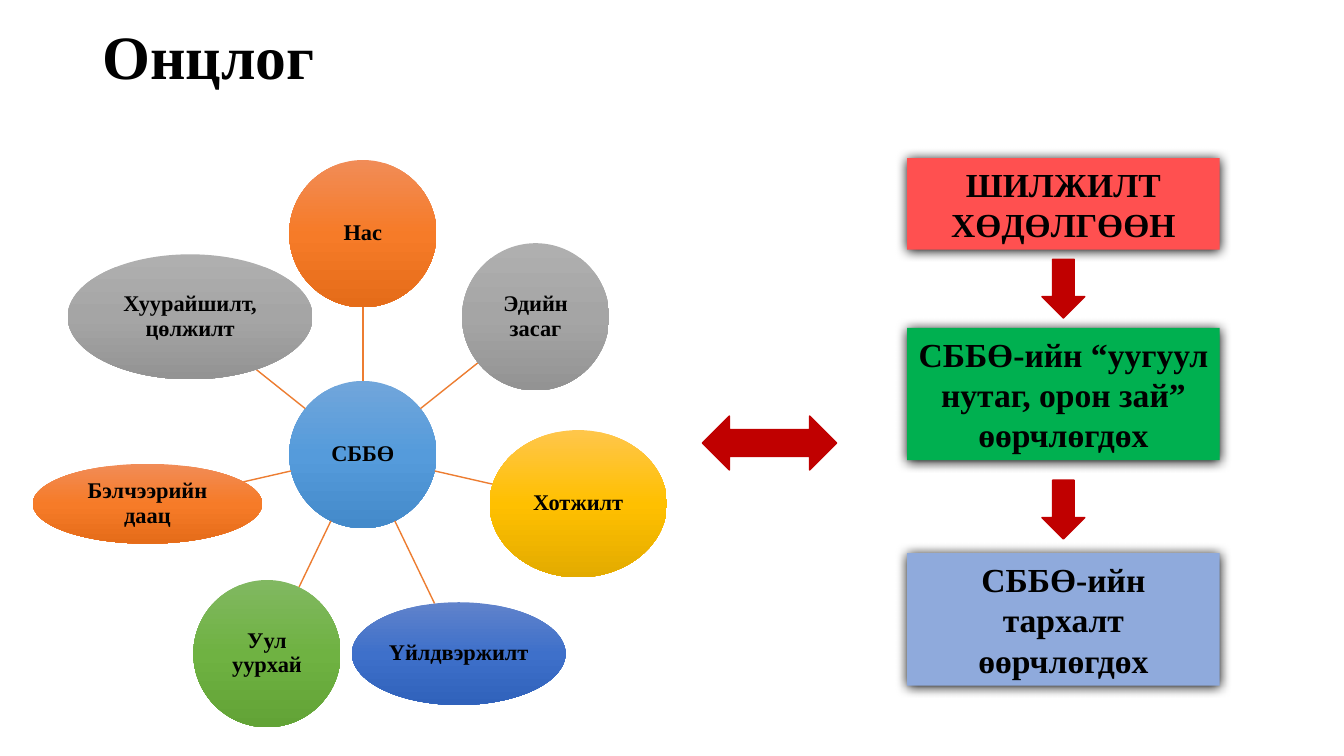
"""Build the slide of factors around СББӨ and the resulting chain of changes."""
import copy
import math
import dataclasses
import lxml.etree
import pptx
import pptx.util
import pptx.dml.color
import pptx.enum.shapes
import pptx.enum.text
import pptx.oxml.ns

Pt = pptx.util.Pt
SHAPES = pptx.enum.shapes.MSO_SHAPE
ALIGN = pptx.enum.text.PP_ALIGN
ANCHOR = pptx.enum.text.MSO_ANCHOR
qn = pptx.oxml.ns.qn


@dataclasses.dataclass(frozen=True)
class Theme:
    font: str = "Times New Roman"
    title_size: int = 44
    box_size: int = 24
    bubble_size: int = 16
    text: str = "000000"
    spoke: str = "ED7D31"
    arrow: str = "C00000"
    red: str = "FF5050"
    green_box: str = "00B050"
    blue_box: str = "8FAADC"
    sky: tuple = ("71A6DB", "559BDB", "448ACA")
    orange: tuple = ("F18C57", "F67B28", "E56C19")
    gray: tuple = ("AFAFAF", "A5A5A5", "939393")
    gold: tuple = ("FFC64B", "FFC000", "E3AB00")
    blue: tuple = ("6183CB", "3E70CA", "3062BB")
    green: tuple = ("81B861", "6FB242", "62A336")


def rgb(code):
    return pptx.dml.color.RGBColor.from_string(code)


def write(frame, text, *, theme, size, align=ALIGN.CENTER, spacing=1.0, inset=None):
    frame.word_wrap = True
    frame.auto_size = pptx.enum.text.MSO_AUTO_SIZE.NONE
    frame.vertical_anchor = ANCHOR.MIDDLE
    if inset is not None:
        frame.margin_left = frame.margin_right = Pt(inset)
        frame.margin_top = frame.margin_bottom = Pt(inset)
    para = frame.paragraphs[0]
    para.alignment = align
    para.line_spacing = spacing
    span = para.add_run()
    span.text = text
    span.font.name = theme.font
    span.font.size = Pt(size)
    span.font.bold = True
    span.font.color.rgb = rgb(theme.text)


class Page:
    def __init__(self, deck, theme):
        self.theme = theme
        self.slide = deck.slides.add_slide(deck.slide_layouts[5])

    def title(self, text, left, top, width, height):
        holder = self.slide.shapes.title
        holder.left, holder.top = Pt(left), Pt(top)
        holder.width, holder.height = Pt(width), Pt(height)
        write(holder.text_frame, text, theme=self.theme, size=self.theme.title_size,
              align=ALIGN.LEFT, spacing=0.9)

    def shape(self, kind, left, top, width, height):
        shape = self.slide.shapes.add_shape(kind, Pt(left), Pt(top), Pt(width), Pt(height))
        shape.shadow.inherit = False
        shape.line.fill.background()
        return shape

    def bubble(self, text, center, size, colors):
        (x, y), (width, height) = center, size
        bubble = self.shape(SHAPES.OVAL, x - width / 2, y - height / 2, width, height)
        bubble.fill.gradient()
        bubble.fill.gradient_angle = 270
        stops = bubble.element.spPr.find(qn("a:gradFill")).find(qn("a:gsLst"))
        stops.insert(1, copy.deepcopy(stops[0]))
        for stop, position, color in zip(bubble.fill.gradient_stops, (0, 0.5, 1), colors):
            stop.position = position
            stop.color.rgb = rgb(color)
        write(bubble.text_frame, text, theme=self.theme, size=self.theme.bubble_size,
              spacing=0.9, inset=0.7)

    def spoke(self, start, end):
        spoke = self.slide.shapes.add_connector(
            pptx.enum.shapes.MSO_CONNECTOR.STRAIGHT, *(Pt(value) for value in (*start, *end)))
        spoke.line.color.rgb = rgb(self.theme.spoke)
        spoke.line.width = Pt(1)
        lxml.etree.SubElement(spoke.element.spPr, qn("a:effectLst"))

    def box(self, text, left, top, width, height, color):
        box = self.shape(SHAPES.RECTANGLE, left, top, width, height)
        box.fill.solid()
        box.fill.fore_color.rgb = rgb(color)
        effects = box.element.spPr.find(qn("a:effectLst"))
        shadow = lxml.etree.SubElement(
            effects, qn("a:outerShdw"), blurRad=str(Pt(8.5)), dist=str(Pt(1)),
            dir="5400000", algn="t", rotWithShape="0")
        lxml.etree.SubElement(shadow, qn("a:srgbClr"), val=self.theme.text)
        write(box.text_frame, text, theme=self.theme, size=self.theme.box_size)

    def arrow(self, kind, left, top, width, height):
        arrow = self.shape(kind, left, top, width, height)
        arrow.fill.solid()
        arrow.fill.fore_color.rgb = rgb(self.theme.arrow)
        arrow.line.color.rgb = rgb(self.theme.arrow)
        arrow.line.width = Pt(1)


def draw_wheel(page):
    theme = page.theme
    hub_x, hub_y, diameter, orbit = 259.2, 324.7, 105.2, 157.8
    circle = (diameter, diameter)
    factors = (
        ("Нас", circle, theme.orange),
        ("Эдийн засаг", circle, theme.gray),
        ("Хотжилт", (126.7, diameter), theme.gold),
        ("Үйлдвэржилт", (152.6, 73.4), theme.blue),
        ("Уул уурхай", circle, theme.green),
        ("Бэлчээрийн даац", (163.8, 57), theme.orange),
        ("Хуурайшилт, цөлжилт", (175, 89.3), theme.gray),
    )
    page.bubble("СББӨ", (hub_x, hub_y), circle, theme.sky)
    for index, (text, size, colors) in enumerate(factors):
        angle = 2 * math.pi * index / len(factors)
        across, down = math.sin(angle), -math.cos(angle)
        reach = 1 / math.hypot(2 * across / size[0], 2 * down / size[1])
        start, end, center = (
            (hub_x + distance * across, hub_y + distance * down)
            for distance in (diameter / 2, orbit - reach, orbit))
        page.spoke(start, end)
        page.bubble(text, center, size, colors)


def draw_chain(page):
    theme = page.theme
    left, width, arrow_width = 648, 223.2, 30.6
    steps = (
        ("ШИЛЖИЛТ ХӨДӨЛГӨӨН", 113, 65.4, theme.red),
        ("СББӨ-ийн “уугуул нутаг, орон зай” өөрчлөгдөх", 234.2, 94.5, theme.green_box),
        ("СББӨ-ийн тархалт өөрчлөгдөх", 395.2, 94.5, theme.blue_box),
    )
    for text, top, height, color in steps:
        page.box(text, left, top, width, height, color)
    page.arrow(SHAPES.LEFT_RIGHT_ARROW, 501.8, 297.2, 95.8, 38.5)
    for top in (185.2, 343):
        page.arrow(SHAPES.DOWN_ARROW, left + (width - arrow_width) / 2, top, arrow_width, 42)


def main():
    deck = pptx.Presentation()
    deck.slide_width, deck.slide_height = Pt(960), Pt(540)
    page = Page(deck, Theme())
    page.title("Онцлог", 66, -2.9, 828, 90.7)
    draw_wheel(page)
    draw_chain(page)
    deck.save("out.pptx")


if __name__ == "__main__":
    main()
